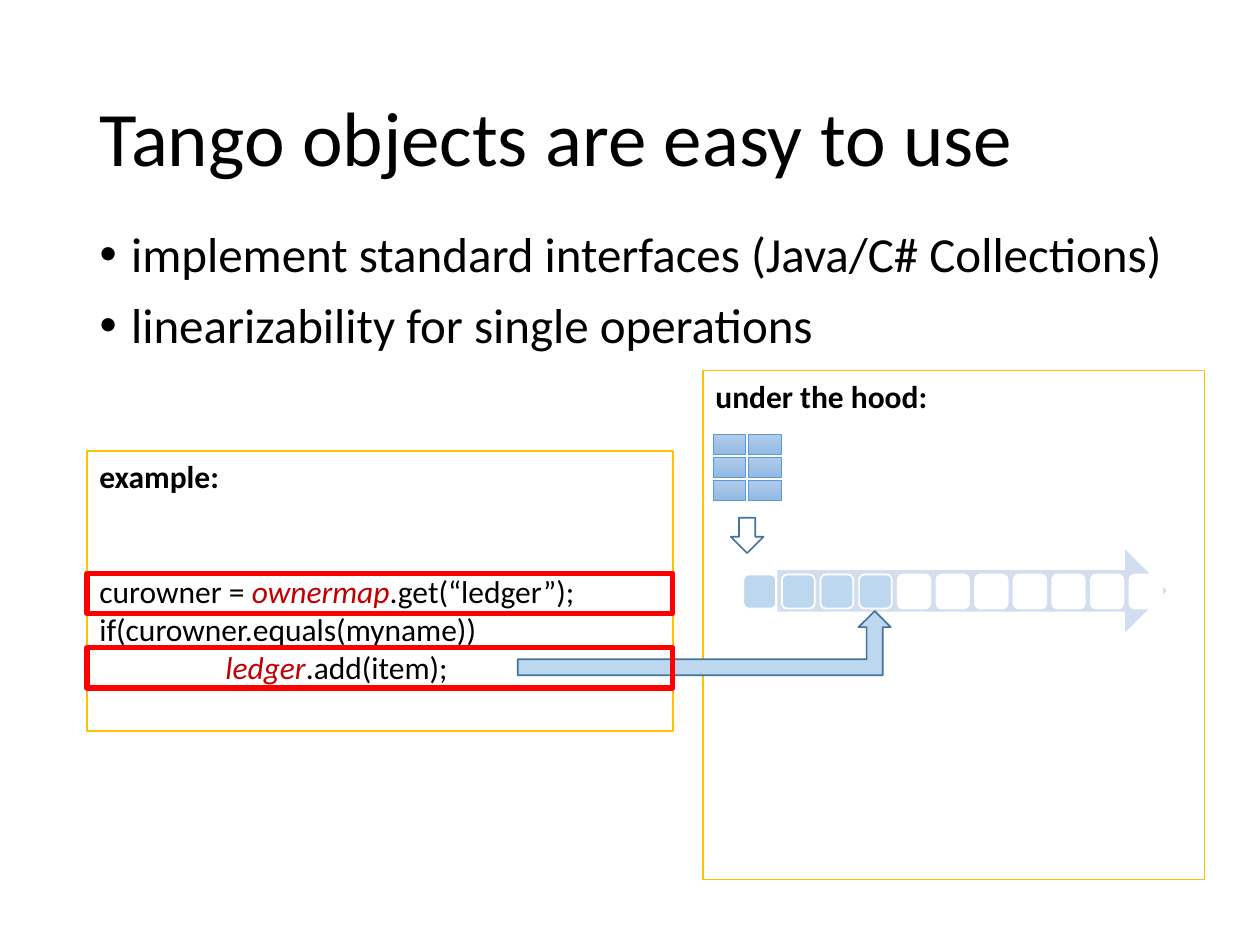
from pptx import Presentation, util as u
from pptx.dml.color import RGBColor
from pptx.enum import shapes, text

Inches, Pt = u.Inches, u.Pt
Kind = shapes.MSO_SHAPE

theme = dict(
    font="Calibri", title=44, body=28, code=18,
    ink="000000", paper="FFFFFF", gold="FFC000", red="FF0000", name="C00000",
    pale="D2DEEF", sky="BDD7EE", navy="43739E", blue="5B9BD5",
    top="B1CBE9", base="93B9E4",
)


def draw(kind, box, fill=None, line=None, width=1):
    """Add a preset shape; fill is a colour name, a pair of them, or None."""
    shape = slide.shapes.add_shape(kind, *map(Inches, box))
    shape.shadow.inherit = False
    if fill is None:
        shape.fill.background()
    elif isinstance(fill, tuple):
        shape.fill.gradient()
        shape.fill.gradient_angle = 270
        for stop, tone in zip(shape.fill.gradient_stops, fill):
            stop.color.rgb = RGBColor.from_string(theme[tone])
    else:
        shape.fill.solid()
        shape.fill.fore_color.rgb = RGBColor.from_string(theme[fill])
    if line:
        shape.line.color.rgb = RGBColor.from_string(theme[line])
        shape.line.width = Pt(width)
    else:
        shape.line.fill.background()
    return shape


def write(frame, lines, size, **form):
    """Fill a frame with lines of (text, font changes) runs."""
    for i, (runs, marks) in enumerate(lines):
        para = frame.paragraphs[0] if i == 0 else frame.add_paragraph()
        for key, value in {"alignment": text.PP_ALIGN.LEFT, **form, **marks}.items():
            if key in ("marL", "indent"):
                para._p.get_or_add_pPr().set(key, str(value))
            else:
                setattr(para, key, value)
        for words, look in runs:
            run = para.add_run()
            run.text = words
            look = {"color": "ink", **look}
            run.font.color.rgb = RGBColor.from_string(theme[look.pop("color")])
            for key, value in {"name": theme["font"], "size": Pt(size), **look}.items():
                setattr(run.font, key, value)


deck = Presentation()
deck.slide_width, deck.slide_height = Inches(10), Inches(7.5)
slide = deck.slides.add_slide(deck.slide_layouts[1])

# Title and bullets
title, body = slide.placeholders
for holder, box, anchor in (
    (title, (0.69, 0.4, 8.62, 1.45), text.MSO_ANCHOR.MIDDLE),
    (body, (0.69, 1.78, 8.76, 3.57), text.MSO_ANCHOR.TOP),
):
    for key, value in zip(("left", "top", "width", "height"), box):
        setattr(holder, key, Inches(value))
    holder.text_frame.auto_size = text.MSO_AUTO_SIZE.NONE
    holder.text_frame.vertical_anchor = anchor

write(title.text_frame, [([("Tango objects are easy to use", {})], {})],
      theme["title"], line_spacing=0.9)
points = ["implement standard interfaces (Java/C# Collections)",
          "linearizability for single operations"]
write(body.text_frame, [([(point, {})], {}) for point in points], theme["body"],
      line_spacing=0.9, space_before=Pt(10),
      marL=Inches(0.25), indent=Inches(-0.25))

# Panel on the right, with the log
hood = draw(Kind.RECTANGLE, (5.58, 2.94, 3.98, 4.04), "paper", "gold")
draw(Kind.RIGHT_ARROW, (6.17, 4.36, 3.09, 0.66), "pale")
count, used = 12, 4
pitch = (9.27 - 5.9) / (count - 1)
for i in range(count):
    draw(Kind.ROUNDED_RECTANGLE, (5.9 + i * pitch, 4.56, 0.26, 0.27),
         "sky" if i < used else "paper", "paper")

# Panel on the left, with the code
demo = draw(Kind.RECTANGLE, (0.69, 3.58, 4.65, 2.22), "paper", "gold")
head = {"bold": True}
name = {"color": "name", "italic": True}
code = [
    ([("example:", head)], {}),
    ([("curowner = ", {}), ("ownermap", name), (".get(“ledger”);", {})],
     {"space_before": Pt(44)}),
    ([("if(curowner.equals(myname))", {})], {}),
    ([("ledger", name), (".add(item);", {})], {"marL": Inches(1)}),
]
for panel, lines in ((hood, [([("under the hood:", head)], {})]), (demo, code)):
    panel.text_frame.word_wrap = True
    panel.text_frame.vertical_anchor = text.MSO_ANCHOR.TOP
    write(panel.text_frame, lines, theme["code"])

# Arrow from code to log, and frames round the two calls
draw(Kind.BENT_UP_ARROW, (4.11, 4.85, 2.96, 0.51), "sky", "navy")
for top in (4.55, 5.14):
    draw(Kind.RECTANGLE, (0.69, top, 4.65, 0.32), None, "red", 3)

# Map grid, with the arrow down to the log
draw(Kind.DOWN_ARROW, (5.8, 4.11, 0.26, 0.28), "paper", "navy")
for row in range(3):
    for col in range(2):
        draw(Kind.RECTANGLE, (5.66 + col * 0.28, 3.45 + row * 0.18, 0.26, 0.16),
             ("top", "base"), "blue", 0.5)

deck.save("out.pptx")
